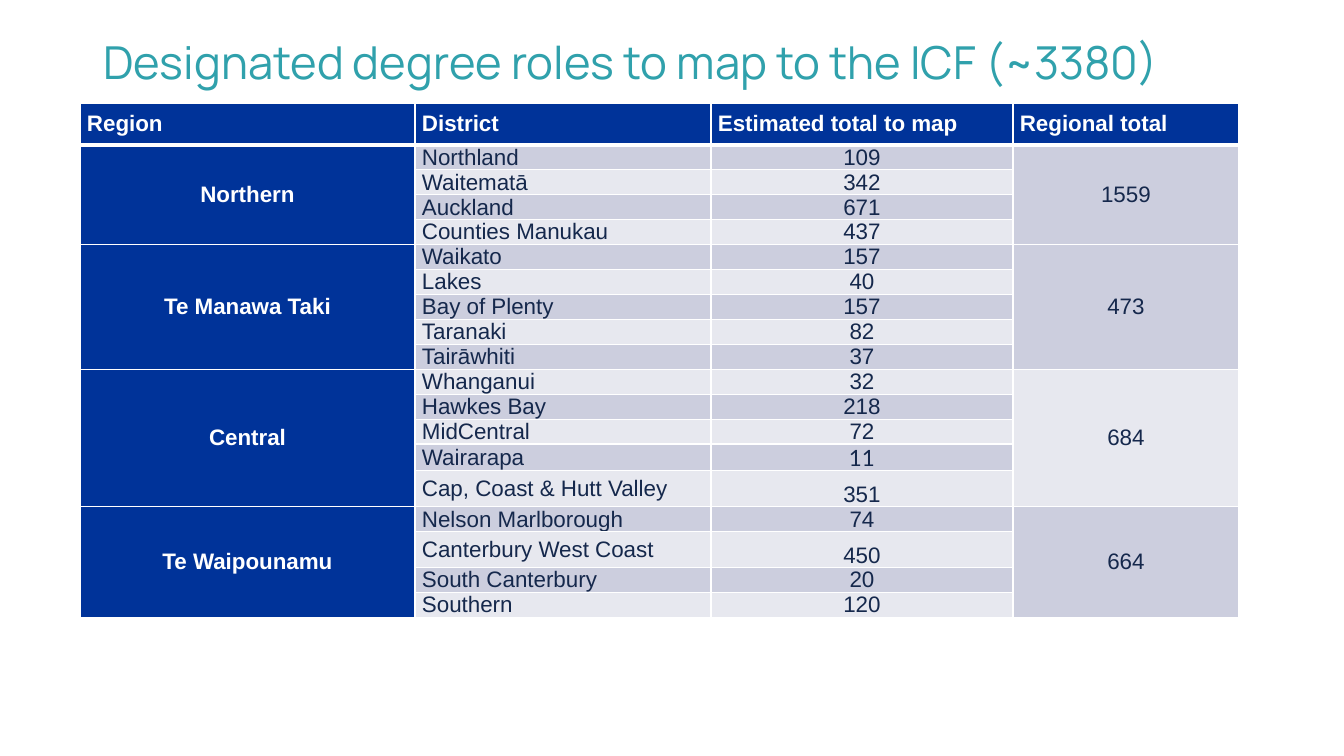
from lxml import etree
from pptx import Presentation
from pptx import util as u
from pptx.dml.color import RGBColor
from pptx.enum import text as t
from pptx.oxml import ns

REGIONS = [
    ("Northern", [("Northland", 109), ("Waitematā", 342), ("Auckland", 671),
                  ("Counties Manukau", 437)]),
    ("Te Manawa Taki", [("Waikato", 157), ("Lakes", 40), ("Bay of Plenty", 157),
                        ("Taranaki", 82), ("Tairāwhiti", 37)]),
    ("Central", [("Whanganui", 32), ("Hawkes Bay", 218), ("MidCentral", 72),
                 ("Wairarapa", 11), ("Cap, Coast & Hutt Valley", 351)]),
    ("Te Waipounamu", [("Nelson Marlborough", 74), ("Canterbury West Coast", 450),
                       ("South Canterbury", 20), ("Southern", 120)]),
]
HEADS = ["Region", "District", "Estimated total to map", "Regional total"]
WIDTHS = [335, 296, 302, 226]
TALL = {"Cap, Coast & Hutt Valley", "Canterbury West Coast"}
LATO = {"Wairarapa"}
BLUE, NAVY, WHITE, TEAL = "003399", "15284C", "FFFFFF", "30A1AC"
BANDS = ["E7E8EF", "CCCEDE"]
LEFT, MID = t.PP_ALIGN.LEFT, t.PP_ALIGN.CENTER


def px(n):
    return u.Emu(round(n * 914400 / 100.8))


def tint(code):
    return RGBColor.from_string(code)


class Deck:
    """Holds the style and the current slide."""

    def __init__(self):
        self.prs = Presentation()
        self.prs.slide_width, self.prs.slide_height = px(1344), px(756)
        self.slide = self.prs.slides.add_slide(self.prs.slide_layouts[5])

    def run(self, para, words, size, color, bold=False, face="Arial"):
        run = para.add_run()
        run.text = words
        font = run.font
        font.size, font.bold, font.name = u.Pt(size), bold, face
        font.color.rgb = tint(color)

    def title(self, words, x, y, w, h):
        box = self.slide.shapes.title
        box.left, box.top, box.width, box.height = map(px, (x, y, w, h))
        frame = box.text_frame
        frame.word_wrap = True
        frame.auto_size = t.MSO_AUTO_SIZE.NONE
        frame.vertical_anchor = t.MSO_ANCHOR.MIDDLE
        para = frame.paragraphs[0]
        para.alignment, para.line_spacing = LEFT, 0.9
        self.run(para, words, 32.4, TEAL, face="Manrope")

    def table(self, x, y, widths, heights):
        grid = self.slide.shapes.add_table(
            len(heights), len(widths), px(x), px(y),
            px(sum(widths)), px(sum(heights))).table
        grid.horz_banding = False
        for col, width in zip(grid.columns, widths):
            col.width = px(width)
        for row, height in zip(grid.rows, heights):
            row.height = px(height)
        for i, row in enumerate(grid.rows):
            for cell in row.cells:
                cell.margin_left = cell.margin_right = px(7)
                cell.margin_top = cell.margin_bottom = 0
                self.edges(cell, 3 if i == 1 else 1, 3 if i == 0 else 1)
        return grid

    def edges(self, cell, top, bottom):
        props = cell._tc.get_or_add_tcPr()
        for side, width in zip("LRTB", (1, 1, top, bottom)):
            line = etree.SubElement(props, ns.qn(f"a:ln{side}"), w=str(u.Pt(width)))
            fill = etree.SubElement(line, ns.qn("a:solidFill"))
            etree.SubElement(fill, ns.qn("a:srgbClr"), val=WHITE)

    def cell(self, cell, words, fill, align=LEFT, head=False, low=False, face="Arial"):
        cell.fill.solid()
        cell.fill.fore_color.rgb = tint(fill)
        cell.vertical_anchor = t.MSO_ANCHOR.BOTTOM if low else t.MSO_ANCHOR.MIDDLE
        para = cell.text_frame.paragraphs[0]
        para.alignment = align
        self.run(para, words, 16, WHITE if head else NAVY, head, face)


def main():
    deck = Deck()
    deck.title("Designated degree roles to map to the ICF (~3380)", 93, 21, 1236, 87)
    heights = [42] + [36 if name in TALL else 24
                      for _, areas in REGIONS for name, _ in areas]
    grid = deck.table(80, 103, WIDTHS, heights)
    for col, head in enumerate(HEADS):
        deck.cell(grid.cell(0, col), head, BLUE, head=True)
    row = 1
    for region, areas in REGIONS:
        last = row + len(areas) - 1
        for col in (0, 3):
            grid.cell(row, col).merge(grid.cell(last, col))
        total = sum(count for _, count in areas)
        deck.cell(grid.cell(row, 0), region, BLUE, MID, head=True)
        deck.cell(grid.cell(row, 3), str(total), BANDS[row % 2], MID)
        for name, count in areas:
            band = BANDS[row % 2]
            face = "Lato" if name in LATO else "Arial"
            deck.cell(grid.cell(row, 1), name, band)
            deck.cell(grid.cell(row, 2), str(count), band, MID, low=True, face=face)
            row += 1
    deck.prs.save("out.pptx")


if __name__ == "__main__":
    main()
